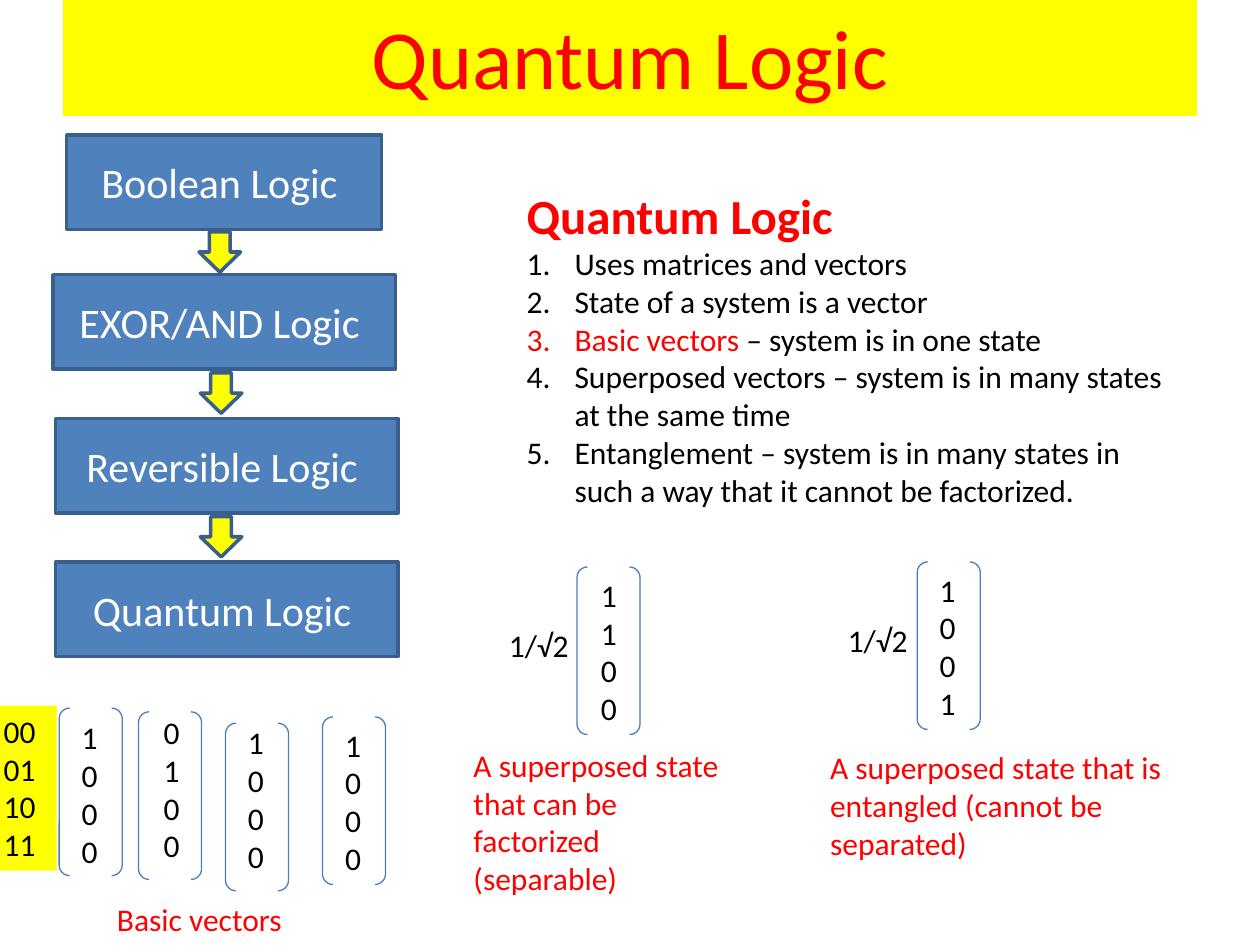
from pptx import Presentation
from pptx.dml.color import RGBColor
from pptx.enum.shapes import MSO_SHAPE as Shape
from pptx.enum.text import MSO_ANCHOR as Anchor, MSO_AUTO_SIZE as AutoSize, PP_ALIGN as Align
from pptx.oxml.ns import qn
from pptx.util import Inches, Pt
from lxml.etree import SubElement

COLORS = {
    "yellow": "FFFF00",
    "red": "FF0000",
    "blue": "4F81BD",
    "outline": "3A5F8C",
    "bracket": "4B7EBC",
    "white": "FFFFFF",
    "black": "000000",
}


def color(name):
    return RGBColor.from_string(COLORS[name])


class SlideBuilder:
    font = "Calibri"
    text_size = 18

    def __init__(self, slide):
        self.slide = slide

    def format_span(self, span, tone="black", size=text_size, bold=False):
        span.font.name = self.font
        span.font.size = Pt(size)
        span.font.bold = bold
        span.font.color.rgb = color(tone)

    def place(self, shape, left, top, width, height):
        shape.left, shape.top = Inches(left), Inches(top)
        shape.width, shape.height = Inches(width), Inches(height)

    def title(self, text, *bounds):
        title = self.slide.shapes.title
        self.place(title, *bounds)
        title.fill.solid()
        title.fill.fore_color.rgb = color("yellow")
        frame = title.text_frame
        frame.text = text
        frame.vertical_anchor = Anchor.MIDDLE
        frame.paragraphs[0].alignment = Align.CENTER
        self.format_span(frame.paragraphs[0].runs[0], "red", 48)

    def numbered_list(self, heading, items, *bounds):
        body = self.slide.placeholders[1]
        self.place(body, *bounds)
        frame = body.text_frame
        frame.auto_size = AutoSize.NONE
        frame.text = heading
        head = frame.paragraphs[0]
        head.space_before = Pt(0)
        self.format_span(head.runs[0], "red", 28, True)
        self.set_bullet(head, 0, "buNone")
        for item in items:
            para = frame.add_paragraph()
            para.space_before = Pt(0)
            for text, tone in item:
                span = para.add_run()
                span.text = text
                self.format_span(span, tone)
            self.set_bullet(para, 0.38, "buAutoNum", type="arabicPeriod")

    def set_bullet(self, para, indent, kind, **attributes):
        properties = para._p.get_or_add_pPr()
        properties.set("marL", str(Inches(indent)))
        properties.set("indent", str(-Inches(indent)))
        SubElement(properties, qn(f"a:{kind}"), attributes)

    def shape(self, kind, bounds, fill=None, line=None, line_width=2):
        shape = self.slide.shapes.add_shape(kind, *map(Inches, bounds))
        shape.shadow.inherit = False
        if fill:
            shape.fill.solid()
            shape.fill.fore_color.rgb = color(fill)
        else:
            shape.fill.background()
        if line:
            shape.line.color.rgb = color(line)
            shape.line.width = Pt(line_width)
        else:
            shape.line.fill.background()
        return shape

    def logic_box(self, text, *bounds):
        box = self.shape(Shape.RECTANGLE, bounds, "blue", "outline")
        frame = box.text_frame
        frame.text = text
        frame.vertical_anchor = Anchor.MIDDLE
        para = frame.paragraphs[0]
        para.alignment = Align.CENTER
        self.format_span(para.runs[0], "white", 24)

    def down_arrow(self, left, top):
        self.shape(Shape.DOWN_ARROW, (left, top, 0.33, 0.32), "yellow", "outline")

    def text(self, lines, *bounds, tone="black", fill=None, wrap=True):
        box = self.slide.shapes.add_textbox(*map(Inches, bounds))
        if fill:
            box.fill.solid()
            box.fill.fore_color.rgb = color(fill)
        frame = box.text_frame
        frame.word_wrap = wrap
        frame.text = lines
        for para in frame.paragraphs:
            self.format_span(para.runs[0], tone)

    def vector(self, entries, left, top, text_left, text_top):
        self.shape(Shape.DOUBLE_BRACKET, (left, top, 0.5, 1.33), None, "bracket", 0.75)
        self.text(entries, text_left, text_top, 0.33, 1.31)


def main():
    deck = Presentation()
    deck.slide_width, deck.slide_height = Inches(10), Inches(7.5)
    page = SlideBuilder(deck.slides.add_slide(deck.slide_layouts[1]))

    page.title("Quantum Logic", 0.5, -0.03, 9, 0.95)

    for text, left, top, width in [
        ("Boolean Logic ", 0.53, 1.07, 2.5),
        ("EXOR/AND Logic ", 0.42, 2.18, 2.72),
        ("Reversible Logic ", 0.44, 3.32, 2.72),
        ("Quantum Logic ", 0.44, 4.46, 2.72),
    ]:
        page.logic_box(text, left, top, width, 0.75)
    for left, top in [(1.58, 1.84), (1.59, 2.96), (1.59, 4.1)]:
        page.down_arrow(left, top)

    page.numbered_list(
        "Quantum Logic",
        [
            [("Uses matrices and vectors", "black")],
            [("State of a system is a vector", "black")],
            [("Basic vectors ", "red"), ("– system is in one state", "black")],
            [("Superposed vectors – system is in many states at the same time", "black")],
            [("Entanglement – system is in many states in such a way that "
              "it cannot be factorized.", "black")],
        ],
        4.08, 1.42, 5.42, 2.69,
    )

    for entries, left, top, text_left, text_top in [
        ("1 0 0 0", 0.47, 5.62, 0.55, 5.65),
        ("0 1 0 0", 1.1, 5.65, 1.2, 5.61),
        ("1 0 0 0", 1.79, 5.74, 1.87, 5.69),
        ("1 0 0 0", 2.56, 5.69, 2.64, 5.71),
        ("1 1 0 0", 4.58, 4.5, 4.67, 4.52),
        ("1 0 0 1", 7.28, 4.46, 7.36, 4.48),
    ]:
        page.vector(entries, left, top, text_left, text_top)
    for left, top in [(3.94, 4.92), (6.63, 4.88)]:
        page.text("1/√2", left, top, 0.75, 0.4)

    page.text("00\n01\n10\n11", -0.07, 5.6, 0.52, 1.31, fill="yellow")
    page.text("Basic vectors", 0.83, 7.09, 1.58, 0.4, tone="red", wrap=False)
    page.text("A superposed state that can be factorized\n(separable)",
              3.66, 5.87, 2.34, 1.31, tone="red")
    page.text("A superposed state that is entangled (cannot be separated)",
              6.49, 5.89, 3.26, 1.01, tone="red")

    deck.save("out.pptx")


if __name__ == "__main__":
    main()
